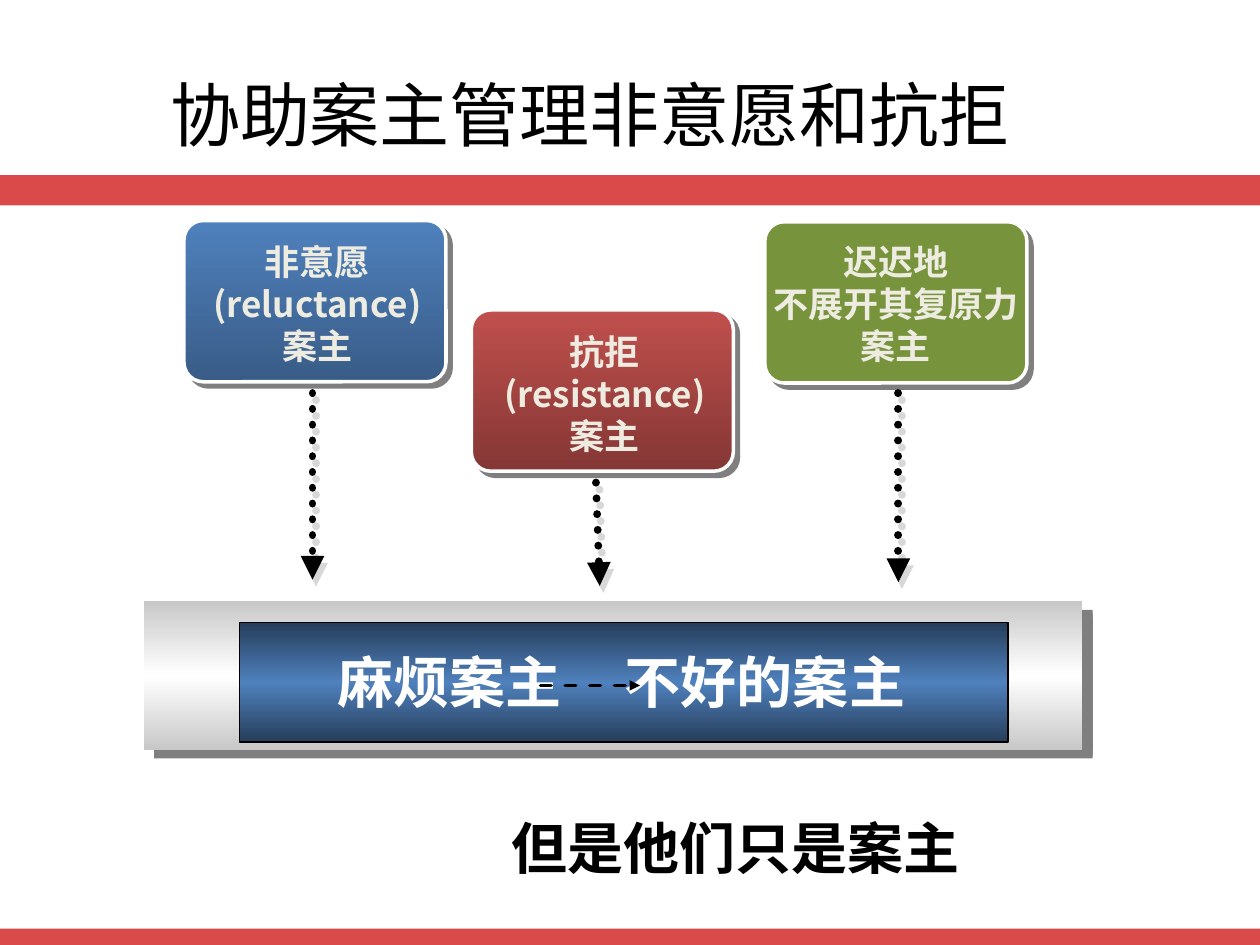
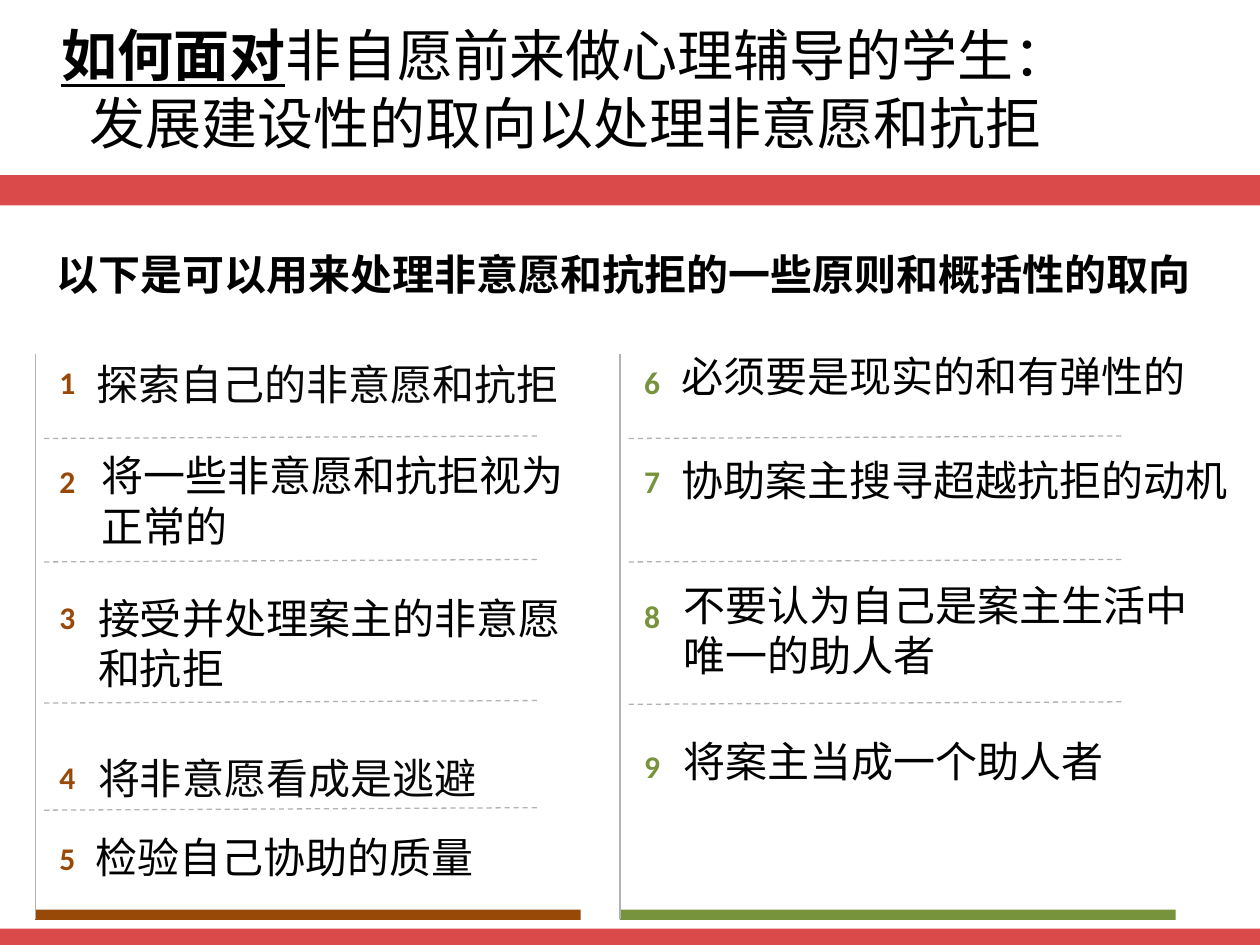
from lxml.etree import SubElement
from pptx import Presentation
from pptx.dml.color import RGBColor
from pptx.enum.dml import MSO_LINE
from pptx.enum.shapes import MSO_CONNECTOR, MSO_SHAPE
from pptx.enum.text import MSO_ANCHOR, MSO_AUTO_SIZE, PP_ALIGN
from pptx.oxml.ns import qn
from pptx.util import Inches, Pt

WIDTH, HEIGHT = 10, 7.5
CJK, LATIN = "Noto Sans CJK SC", "Calibri"
COLORS = {
    "band": "DB4A4A", "black": "000000", "white": "FFFFFF", "cream": "EEECE1",
    "gray": "B2B2B2", "silver": "C8C8C8", "navy": "263D5A", "blue": "4F81BD",
    "deep blue": "395C87", "red": "C0504D", "deep red": "853735",
    "green": "77933C", "brown": "984807", "ink": "080808",
}
BANDS = [(0, 1.39, WIDTH, 0.24), (0, 7.37, WIDTH, 0.13)]

CLIENTS_TITLE = "协助案主管理非意愿和抗拒"
CARD_SIZE = (2.08, 1.28)
CARDS = [
    {"lines": ["非意愿", "(reluctance)", "案主"], "fill": ["blue", "deep blue"],
     "corner": (1.46, 1.75), "text": (1.46, 1.86, 2.12, 1.11),
     "arrow": ((2.48, 3.12), (2.48, 4.6))},
    {"lines": ["抗拒", "(resistance)", "案主"], "fill": ["red", "deep red"],
     "corner": (3.74, 2.46), "text": (3.74, 2.57, 2.12, 1.11),
     "arrow": ((4.73, 3.83), (4.76, 4.65))},
    {"lines": ["迟迟地", "不展开其复原力", "案主"], "fill": ["green"],
     "corner": (6.07, 1.76), "text": (5.91, 1.86, 2.4, 1.11),
     "arrow": ((7.13, 3.12), (7.13, 4.62))},
]
LABELS = "麻烦案主\t不好的案主"
CONCLUSION = "但是他们只是案主"

PRINCIPLES_TITLE = [
    ("如何面对", {"bold": True, "underline": True}),
    ("非自愿前来做心理辅导的学生：\v发展建设性的取向以处理非意愿和抗拒", {}),
]
LEAD = "以下是可以用来处理非意愿和抗拒的一些原则和概括性的取向"
COLUMNS = [
    {"left": 0.28, "width": 4.33, "color": "brown", "first": 1,
     "dividers": [3.48, 4.46, 5.58, 6.43],
     "items": [
         (["探索自己的非意愿和抗拒"], 2.74, (0.67, 2.8), 3.9, "ink"),
         (["将一些非意愿和抗拒视为", "正常的"], 3.53, (0.71, 3.52), 3.9, "black"),
         (["接受并处理案主的非意愿", "和抗拒"], 4.61, (0.68, 4.65), 3.9, "black"),
         (["将非意愿看成是逃避"], 5.88, (0.68, 5.92), 3.23, "ink"),
         (["检验自己协助的质量"], 6.52, (0.66, 6.55), 3.23, "black")]},
    {"left": 4.92, "width": 4.41, "color": "green", "first": 6,
     "dividers": [3.48, 4.46, 5.59],
     "items": [
         (["必须要是现实的和有弹性的"], 2.74, (5.31, 2.73), 4.24, "black"),
         (["协助案主搜寻超越抗拒的动机"], 3.53, (5.31, 3.56), 4.58, "black"),
         (["不要认为自己是案主生活中", "唯一的助人者"], 4.6, (5.33, 4.55), 4.24, "black"),
         (["将案主当成一个助人者"], 5.79, (5.33, 5.79), 3.57, "black")]},
]


def rgb(name):
    return RGBColor.from_string(COLORS[name])


def place(lengths):
    return [Inches(length) for length in lengths]


def add_effect(properties, color=None, alpha=50, distance=0, angle=0):
    effects = SubElement(properties, qn("a:effectLst"))
    if color:
        shadow = SubElement(effects, qn("a:outerShdw"), dist=str(int(Pt(distance))),
                            dir=str(angle * 60000), algn="ctr", rotWithShape="0")
        tone = SubElement(shadow, qn("a:srgbClr"), val=COLORS[color])
        SubElement(tone, qn("a:alpha"), val=str(alpha * 1000))
    return effects


def format_span(span, size=24, color="black", bold=False, underline=False,
                font=CJK, shadow=False):
    span.font.size = Pt(size)
    span.font.bold = bold
    span.font.underline = underline
    span.font.color.rgb = rgb(color)
    properties = span.font._element
    if shadow:
        add_effect(properties, "black", 100, 2, 45)
    span.font.name = font
    SubElement(properties, qn("a:ea"), typeface=font)


def add_text(page, lines, position, align=PP_ALIGN.LEFT, wrap=True, spacing=None,
             inset=0.1, tab=None, **style):
    box = page.shapes.add_textbox(*place(position))
    frame = box.text_frame
    frame.word_wrap = wrap
    frame.auto_size = MSO_AUTO_SIZE.SHAPE_TO_FIT_TEXT
    frame.margin_left = Inches(inset)
    for index, line in enumerate(lines):
        para = frame.add_paragraph() if index else frame.paragraphs[0]
        para.alignment = align
        if spacing:
            para.line_spacing = spacing
        if tab:
            stops = SubElement(para._p.get_or_add_pPr(), qn("a:tabLst"))
            SubElement(stops, qn("a:tab"), pos=str(Inches(tab)), algn="l")
        span = para.add_run()
        span.text = line
        format_span(span, **style)
    return box


def add_title(page, position, spans, spacing=None, size=32):
    title = page.shapes.title
    title.left, title.top, title.width, title.height = place(position)
    frame = title.text_frame
    frame.word_wrap = True
    frame.auto_size = MSO_AUTO_SIZE.NONE
    frame.vertical_anchor = MSO_ANCHOR.MIDDLE
    para = frame.paragraphs[0]
    para.alignment = PP_ALIGN.CENTER
    if spacing:
        para.line_spacing = spacing
    for text, style in spans:
        for index, part in enumerate(text.split("\v")):
            if index:
                para.add_line_break()
            span = para.add_run()
            span.text = part
            format_span(span, size=size, **style)


def add_panel(page, position, fill, kind=MSO_SHAPE.RECTANGLE, line=None, shadow=()):
    panel = page.shapes.add_shape(kind, *place(position))
    if len(fill) == 1:
        panel.fill.solid()
        panel.fill.fore_color.rgb = rgb(fill[0])
    else:
        panel.fill.gradient()
        panel.fill.gradient_angle = 270
        stops = panel._element.spPr.find(".//" + qn("a:gsLst"))
        for stop in list(stops):
            stops.remove(stop)
        for index, name in enumerate(fill):
            share = 100000 * index // (len(fill) - 1)
            stop = SubElement(stops, qn("a:gs"), pos=str(share))
            SubElement(stop, qn("a:srgbClr"), val=COLORS[name])
    if line:
        panel.line.color.rgb = rgb(line[0])
        panel.line.width = Pt(line[1])
    else:
        panel.line.fill.background()
    add_effect(panel._element.spPr, *shadow)
    return panel


def add_line(page, start, end, color="gray", width=0.75, dash=None, arrow=False, shadow=()):
    line = page.shapes.add_connector(MSO_CONNECTOR.STRAIGHT, *place(start + end))
    line.line.color.rgb = rgb(color)
    line.line.width = Pt(width)
    if dash:
        line.line.dash_style = dash
    if arrow:
        outline = line.line._get_or_add_ln()
        outline.set("cap", "rnd")
        SubElement(outline, qn("a:tailEnd"), type="triangle")
    add_effect(line._element.spPr, *shadow)


def add_bands(page):
    for position in BANDS:
        band = add_panel(page, position, ["band"])
        page.slide_layout.shapes.element.append(band.element)


def build_clients(page):
    add_title(page, (0.5, 0.3, 8.36, 1.25), [(CLIENTS_TITLE, {})], Pt(45), 40)
    add_panel(page, (1.14, 4.77, 7.45, 1.18), ["silver", "white", "silver"],
              shadow=("black", 50, 7.8, 40))
    add_panel(page, (1.9, 4.94, 6.1, 0.95), ["navy", "blue", "navy"], line=("black", 0.75))
    add_text(page, [LABELS], (1.95, 5.09, 5.99, 0.64), inset=0.73, tab=2.28,
             size=32, color="white", bold=True, shadow=True)
    for card in CARDS:
        add_line(page, *card["arrow"], color="black", width=4.5, dash=MSO_LINE.ROUND_DOT,
                 arrow=True, shadow=("gray", 50, 4.5, 63))
    for card in CARDS:
        panel = add_panel(page, card["corner"] + CARD_SIZE, card["fill"],
                          MSO_SHAPE.ROUNDED_RECTANGLE, ("white", 2), ("black", 50, 4.2, 45))
        panel.adjustments[0] = 0.12
        add_text(page, card["lines"], card["text"], align=PP_ALIGN.CENTER,
                 size=20, color="cream", bold=True)
    add_line(page, (4.29, 5.44), (5.08, 5.44), color="black", width=2,
             dash=MSO_LINE.DASH, arrow=True)
    add_text(page, [CONCLUSION], (3.96, 6.41, 3.79, 0.64), wrap=False, size=32, bold=True)


def build_principles(page):
    add_title(page, (0.04, 0.02, 8.9, 1.36), PRINCIPLES_TITLE)
    add_text(page, [LEAD], (0.35, 1.92, 9.29, 0.5), bold=True)
    for column in COLUMNS:
        left, color = column["left"], column["color"]
        add_panel(page, (left, 7.22, column["width"], 0.08), [color])
        add_line(page, (left, 2.81), (left, 7.29))
        for top in column["dividers"]:
            add_line(page, (left + 0.07, top), (left + 4.01, top - 0.02), dash=MSO_LINE.DASH)
        for number, item in enumerate(column["items"], column["first"]):
            lines, top, corner, width, ink = item
            add_text(page, [str(number)], (left + 0.01, top, 0.49, 0.46), spacing=1.3,
                     align=PP_ALIGN.CENTER, size=18, color=color, bold=True, font=LATIN)
            add_text(page, lines, corner + (width, 0.5 if len(lines) == 1 else 0.91),
                     wrap=False, color=ink)


def main():
    deck = Presentation()
    deck.slide_width, deck.slide_height = place((WIDTH, HEIGHT))
    layout = deck.slide_layouts[5]
    pages = [deck.slides.add_slide(layout) for _ in range(2)]
    add_bands(pages[0])
    build_clients(pages[0])
    build_principles(pages[1])
    deck.save("out.pptx")


if __name__ == "__main__":
    main()
